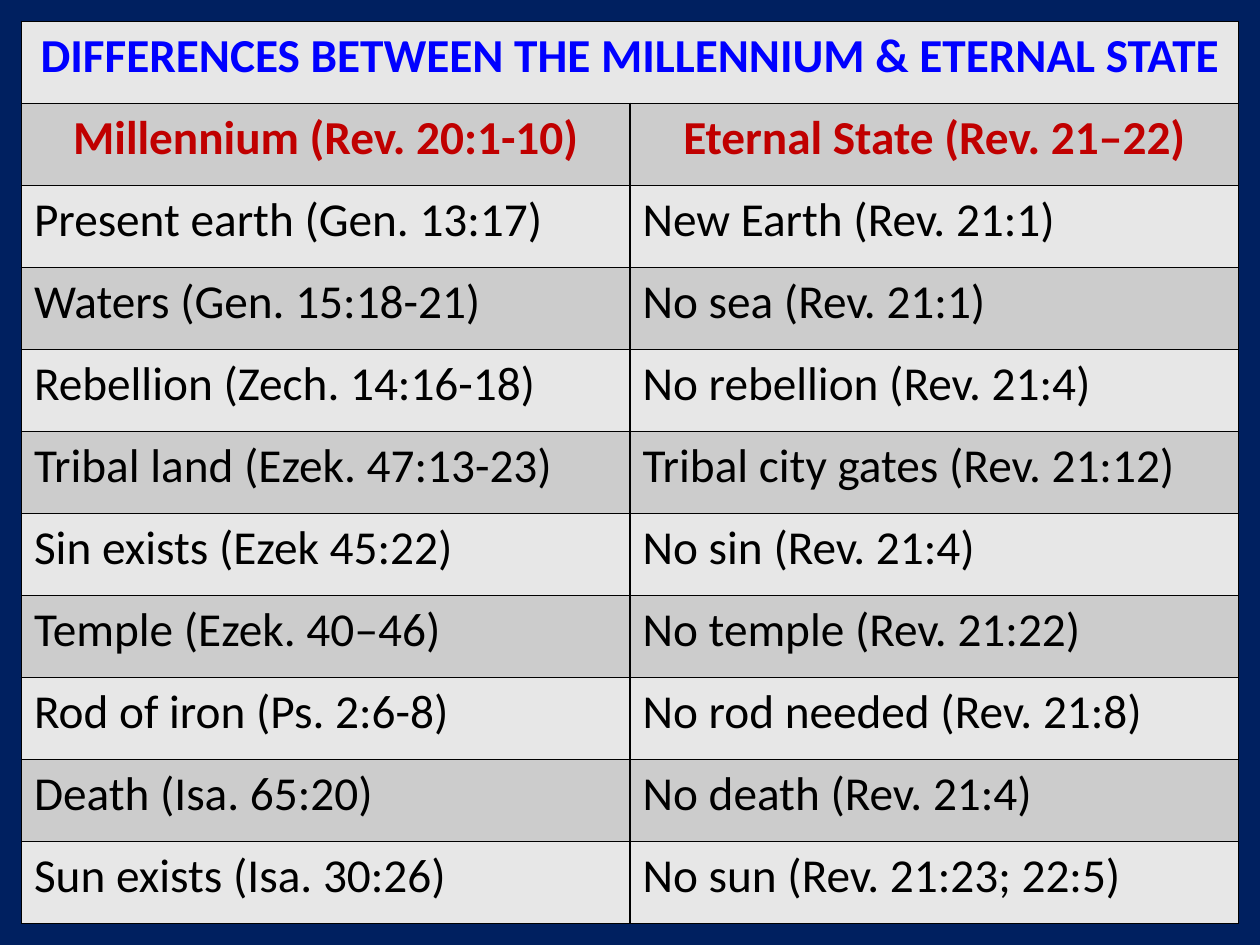
from lxml.etree import SubElement as Sub
from pptx import Presentation
from pptx.dml.color import RGBColor as RGB
from pptx.enum.text import PP_ALIGN as AL
from pptx.oxml.ns import qn
from pptx.util import Inches, Pt

COLORS = {"navy": "002060", "light": "E7E7E7", "dark": "CCCCCC",
          "blue": "0000FF", "red": "C00000", "black": "000000"}
TITLE = "DIFFERENCES BETWEEN THE MILLENNIUM & ETERNAL STATE"
HEADS = ("Millennium (Rev. 20:1-10)", "Eternal State (Rev. 21‒22)")
CONTRASTS = [
    ("Present earth (Gen. 13:17)", "New Earth (Rev. 21:1)"),
    ("Waters (Gen. 15:18-21)", "No sea (Rev. 21:1)"),
    ("Rebellion (Zech. 14:16-18)", "No rebellion (Rev. 21:4)"),
    ("Tribal land (Ezek. 47:13-23)", "Tribal city gates (Rev. 21:12)"),
    ("Sin exists (Ezek 45:22)", "No sin (Rev. 21:4)"),
    ("Temple (Ezek. 40‒46)", "No temple (Rev. 21:22)"),
    ("Rod of iron (Ps. 2:6-8)", "No rod needed (Rev. 21:8)"),
    ("Death (Isa. 65:20)", "No death (Rev. 21:4)"),
    ("Sun exists (Isa. 30:26)", "No sun (Rev. 21:23; 22:5)"),
]
FORMATS = {
    "title": {"color": "blue", "bold": True, "align": AL.CENTER},
    "head": {"color": "red", "bold": True, "align": AL.CENTER},
    "body": {"color": "black", "bold": False, "align": AL.LEFT},
}


class Deck:
    """Holds the style and the current slide, and draws its elements."""

    width, height, margin = 10, 7.5, 0.17
    font = {"name": "Calibri", "size": Pt(27)}
    spacing = {"space_before": Pt(12), "space_after": Pt(12)}

    def __init__(self):
        self.prs = Presentation()
        self.prs.slide_width = Inches(self.width)
        self.prs.slide_height = Inches(self.height)

    def slide(self, color):
        self.s = self.prs.slides.add_slide(self.prs.slide_layouts[6])
        self.fill(self.s.background.fill, color)

    def fill(self, fill, color):
        fill.solid()
        fill.fore_color.rgb = RGB.from_string(COLORS[color])

    def borders(self, cell):
        tcPr = cell._tc.get_or_add_tcPr()
        for side in ("L", "R", "T", "B"):
            ln = Sub(tcPr, qn(f"a:ln{side}"), w=str(Pt(1)))
            Sub(Sub(ln, qn("a:solidFill")), qn("a:srgbClr"), val=COLORS["black"])

    def text(self, cell, text, kind):
        fmt = FORMATS[kind]
        p = cell.text_frame.paragraphs[0]
        for name, value in {**self.spacing, "alignment": fmt["align"]}.items():
            setattr(p, name, value)
        r = p.add_run()
        r.text = text
        for name, value in {**self.font, "bold": fmt["bold"]}.items():
            setattr(r.font, name, value)
        r.font.color.rgb = RGB.from_string(COLORS[fmt["color"]])

    def table(self, title, heads, body):
        rows = [(title,), heads, *body]
        w, h = (Inches(side - 2 * self.margin) for side in (self.width, self.height))
        left = top = Inches(self.margin)
        tbl = self.s.shapes.add_table(len(rows), len(heads), left, top, w, h).table
        for col in tbl.columns:
            col.width = w // len(heads)
        for row in tbl.rows:
            row.height = h // len(rows)
        tbl.cell(0, 0).merge(tbl.cell(0, len(heads) - 1))
        for i, texts in enumerate(rows):
            kind = ("title", "head")[i] if i < 2 else "body"
            for cell in tbl.rows[i].cells:
                self.borders(cell)
                self.fill(cell.fill, "dark" if i % 2 else "light")
            for j, text in enumerate(texts):
                self.text(tbl.cell(i, j), text, kind)


def main():
    deck = Deck()
    deck.slide("navy")
    deck.table(TITLE, HEADS, CONTRASTS)
    deck.prs.save("out.pptx")


if __name__ == "__main__":
    main()
